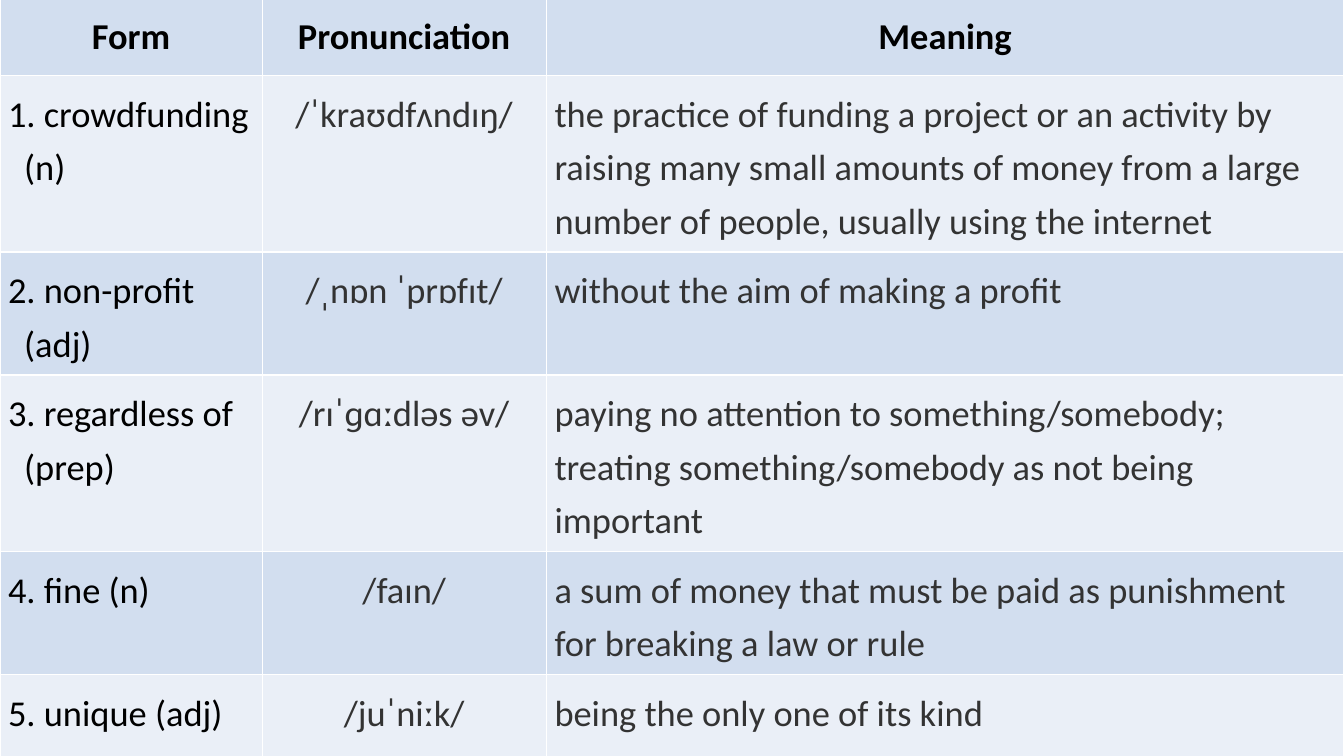
from dataclasses import dataclass

from lxml import etree
from pptx import Presentation
from pptx.dml.color import RGBColor
from pptx.enum.text import MSO_ANCHOR, PP_ALIGN
from pptx.oxml.ns import qn
from pptx.util import Emu, Inches, Pt

LEFT, CENTER = PP_ALIGN.LEFT, PP_ALIGN.CENTER
TOP, MIDDLE = MSO_ANCHOR.TOP, MSO_ANCHOR.MIDDLE

# Grid: the slide is divided into 1333 units across and 750 down
SLIDE_WIDTH, SLIDE_HEIGHT = Inches(13.33), Inches(7.5)
UNITS_ACROSS, UNITS_DOWN = 1333, 750
COLUMN_UNITS = (260, 282, 791)
HEADER_UNITS = 76
TABLE_TOP_UNITS = -1

FONT = "Calibri"
FONT_SIZE = 26
BLACK, GREY, WHITE = "000000", "333333", "FFFFFF"
BANDS = ("D2DEEF", "EAEFF7")
WIDE_INSET, NARROW_INSET = 0.08, 0.04
HANGING_INDENT = 0.16
LINE_SPACING = 1.2


@dataclass(frozen=True)
class Entry:
    form: str
    pronunciation: str
    meaning: str
    units: int


HEADINGS = ("Form", "Pronunciation", "Meaning")
ENTRIES = (
    Entry("1. crowdfunding (n)", "/ˈkraʊdfʌndɪŋ/",
          "the practice of funding a project or an activity by raising many small "
          "amounts of money from a large number of people, usually using the internet", 169),
    Entry("2. non-profit (adj)", "/ˌnɒn ˈprɒfɪt/",
          "without the aim of making a profit", 118),
    Entry("3. regardless of (prep)", "/rɪˈɡɑːdləs əv/",
          "paying no attention to something/somebody; treating something/somebody "
          "as not being important", 169),
    Entry("4. fine (n)", "/faɪn/",
          "a sum of money that must be paid as punishment for breaking a law or rule", 118),
    Entry("5. unique (adj)", "/juˈniːk/", "being the only one of its kind", 102),
)


def across(units: int) -> Emu:
    return Emu(round(SLIDE_WIDTH * units / UNITS_ACROSS))


def down(units: int) -> Emu:
    return Emu(round(SLIDE_HEIGHT * units / UNITS_DOWN))


def rgb(colour: str) -> RGBColor:
    return RGBColor.from_string(colour)


def write(cell, text: str, *, colour: str = BLACK, bold: bool = False, align=LEFT,
          anchor=TOP, inset: float = WIDE_INSET, spacing: float = LINE_SPACING,
          hanging: float = 0) -> None:
    cell.vertical_anchor = anchor
    cell.margin_left = cell.margin_right = Inches(inset)
    cell.margin_top = cell.margin_bottom = Inches(WIDE_INSET)
    paragraph = cell.text_frame.paragraphs[0]
    paragraph.alignment = align
    paragraph.line_spacing = spacing
    if hanging:
        properties = paragraph._p.get_or_add_pPr()
        properties.set("marL", str(Inches(hanging)))
        properties.set("indent", str(-Inches(hanging)))
    run = paragraph.add_run()
    run.text = text
    run.font.name = FONT
    run.font.size = Pt(FONT_SIZE)
    run.font.bold = bold
    run.font.color.rgb = rgb(colour)


def paint(cell, band: str) -> None:
    """Borders go in before the fill, as the schema orders them."""
    properties = cell._tc.get_or_add_tcPr()
    for side in ("a:lnL", "a:lnR", "a:lnT", "a:lnB"):
        border = etree.SubElement(properties, qn(side), w=str(Pt(1)))
        solid = etree.SubElement(border, qn("a:solidFill"))
        etree.SubElement(solid, qn("a:srgbClr"), val=WHITE)
    cell.fill.solid()
    cell.fill.fore_color.rgb = rgb(band)


def add_vocabulary(slide) -> None:
    row_units = (HEADER_UNITS, *(entry.units for entry in ENTRIES))
    vocabulary = slide.shapes.add_table(
        len(row_units), len(COLUMN_UNITS), 0, down(TABLE_TOP_UNITS),
        across(sum(COLUMN_UNITS)), down(sum(row_units))).table
    vocabulary.first_row = vocabulary.horz_banding = False
    for column, units in zip(vocabulary.columns, COLUMN_UNITS):
        column.width = across(units)
    for index, (row, units) in enumerate(zip(vocabulary.rows, row_units)):
        row.height = down(units)
        for cell in row.cells:
            paint(cell, BANDS[index % 2])

    # Header row
    for cell, heading in zip(vocabulary.rows[0].cells, HEADINGS):
        write(cell, heading, bold=True, align=CENTER, anchor=MIDDLE,
              inset=NARROW_INSET, spacing=1.0)

    # One row per word
    for index, entry in enumerate(ENTRIES, start=1):
        form, pronunciation, meaning = vocabulary.rows[index].cells
        write(form, entry.form, hanging=HANGING_INDENT)
        write(pronunciation, entry.pronunciation, colour=GREY, align=CENTER,
              inset=NARROW_INSET)
        write(meaning, entry.meaning, colour=GREY)


def main() -> None:
    deck = Presentation()
    deck.slide_width, deck.slide_height = SLIDE_WIDTH, SLIDE_HEIGHT
    add_vocabulary(deck.slides.add_slide(deck.slide_layouts[6]))
    deck.save("out.pptx")


if __name__ == "__main__":
    main()
